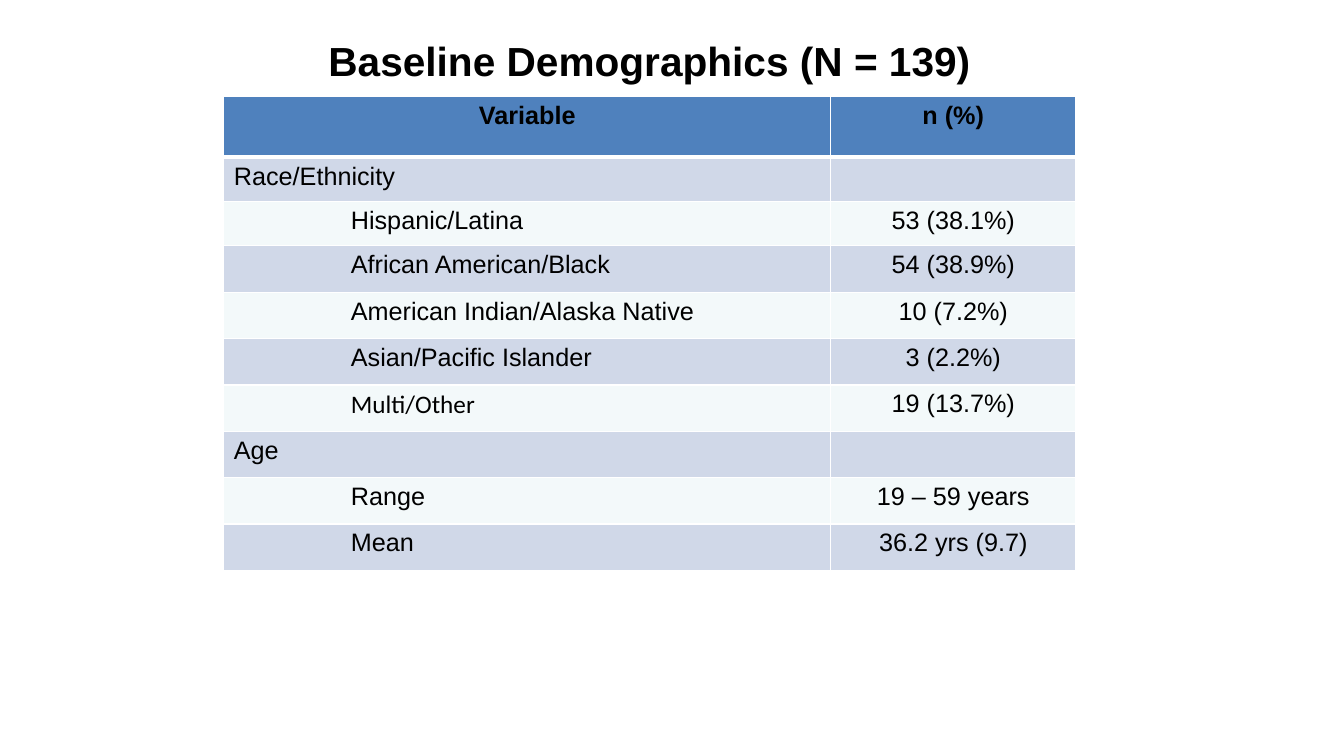
from lxml import etree
from pptx import Presentation
from pptx.dml.color import RGBColor
from pptx.enum import text
from pptx.oxml import ns
from pptx.util import Inches, Pt

HUES = {"text": "000000", "head": "4F81BD", "dark": "D0D8E8",
        "light": "F3F9FA", "line": "FFFFFF"}
COLS = [1.16, 4.86, 2.43]
TALL = [0.6, 0.44, 0.44] + [0.46] * 7
# Label, value, and whether the label is indented under its group
ROWS = [
    ("Variable", "n (%)", False),
    ("Race/Ethnicity", "", False),
    ("Hispanic/Latina", "53 (38.1%)", True),
    ("African American/Black", "54 (38.9%)", True),
    ("American Indian/Alaska Native", "10 (7.2%)", True),
    ("Asian/Pacific Islander", "3 (2.2%)", True),
    ("Multi/Other", "19 (13.7%)", True),
    ("Age", "", False),
    ("Range", "19 – 59 years", True),
    ("Mean", "36.2 yrs (9.7)", True),
]


def color(name):
    return RGBColor.from_string(HUES[name])


def write(frame, words, size, bold=False, center=True, face="Arial"):
    frame.text = words
    para = frame.paragraphs[0]
    para.alignment = text.PP_ALIGN.CENTER if center else text.PP_ALIGN.LEFT
    font = para.font
    if para.runs:
        font = para.runs[0].font
    font.name, font.size, font.bold = face, Pt(size), bold
    font.color.rgb = color("text")


def edge(cell, side, width):
    """Draw one cell border, or clear it when the width is zero."""
    props = cell._tc.get_or_add_tcPr()
    line = etree.SubElement(props, ns.qn("a:ln" + side), w=str(Pt(width)))
    if width:
        fill = etree.SubElement(line, ns.qn("a:solidFill"))
        etree.SubElement(fill, ns.qn("a:srgbClr"), val=HUES["line"])
    else:
        etree.SubElement(line, ns.qn("a:noFill"))


def style(cell, row, col, fill):
    child = ROWS[row][2]
    widths = {"L": 0 if child and col == 1 else 1,
              "R": 0 if child and col == 0 else 1,
              "T": 3 if row == 1 else 1,
              "B": 3 if row == 0 else 1}
    for side, width in widths.items():
        edge(cell, side, width)
    cell.fill.solid()
    cell.fill.fore_color.rgb = color(fill)


def title(slide, left, top, width, height):
    frame = slide.shapes.add_textbox(
        Inches(left), Inches(top), Inches(width), Inches(height)).text_frame
    frame.word_wrap = True
    frame.vertical_anchor = text.MSO_ANCHOR.MIDDLE
    write(frame, "Baseline Demographics (N = 139)", 29, bold=True)


def table(slide, left, top):
    grid = slide.shapes.add_table(
        len(ROWS), len(COLS), Inches(left), Inches(top),
        Inches(sum(COLS)), Inches(sum(TALL))).table
    for col, width in zip(grid.columns, COLS):
        col.width = Inches(width)
    for row, (label, value, child) in enumerate(ROWS):
        grid.rows[row].height = Inches(TALL[row])
        head = row == 0
        fill = "head" if head else "dark" if row % 2 else "light"
        cells = [grid.cell(row, col) for col in range(len(COLS))]
        for col, cell in enumerate(cells):
            style(cell, row, col, fill)
        if child:
            write(cells[0].text_frame, "", 18)
        else:
            cells[0].merge(cells[1])
        face = "Calibri" if label == "Multi/Other" else "Arial"
        write(cells[int(child)].text_frame, label, 18, head, head, face)
        write(cells[2].text_frame, value, 18, head)


def main():
    deck = Presentation()
    deck.slide_width, deck.slide_height = Inches(13.33), Inches(7.5)
    slide = deck.slides.add_slide(deck.slide_layouts[6])
    title(slide, 1.05, 0.23, 10.79, 0.73)
    table(slide, 2.22, 0.96)
    deck.save("out.pptx")


if __name__ == "__main__":
    main()
